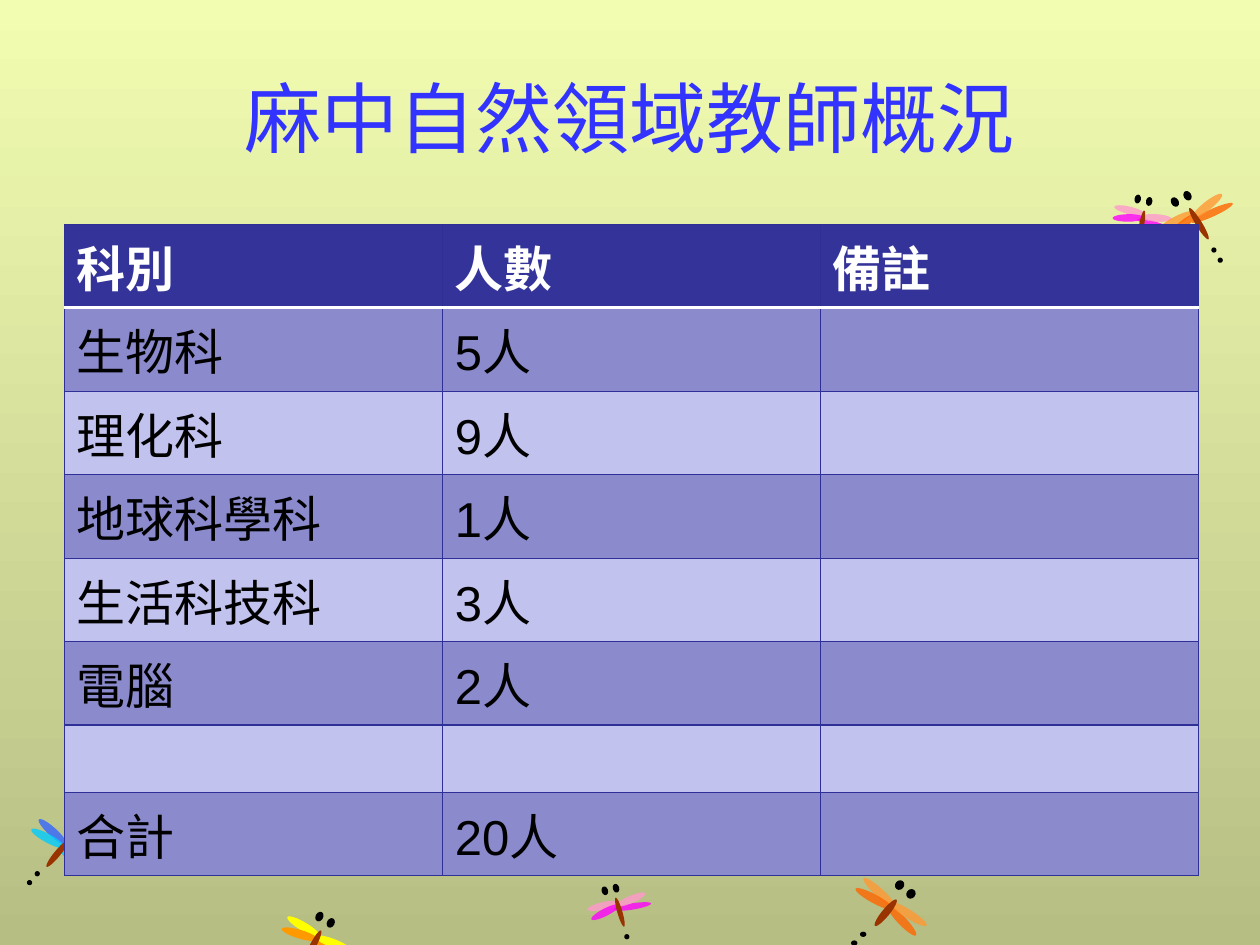
from dataclasses import dataclass

from lxml.etree import SubElement
from pptx import Presentation
from pptx.dml.color import RGBColor
from pptx.enum.shapes import MSO_SHAPE as Preset
from pptx.enum.text import MSO_ANCHOR as Anchor, PP_ALIGN as Align
from pptx.oxml.ns import qn
from pptx.util import Pt

COLORS = {
    "sky": "F2FDB1", "ground": "B7BE84", "title": "3333FF",
    "header": "333399", "dark_row": "8A8ACC", "light_row": "C2C2EE",
    "border": "2F2F98", "white": "FFFFFF", "black": "000000",
    "body": "993300", "magenta": "FF00FF", "pink": "FF99CC",
    "amber": "FF9900", "yellow": "FFFF00", "cyan": "00CCFF",
    "blue": "3366FF", "orange": "FF6600", "peach": "FF9933",
}
FONT = "Arial"
WING_TURNS = (7, 172.9, 183.1, 349)  # relative to the body


@dataclass
class Dragonfly:
    tilt: float
    lower: str
    upper: str
    first_wing: tuple
    wing: tuple
    body: tuple
    eye: tuple
    wings_at: list
    body_at: tuple
    eyes_at: list
    tail_at: list
    dot: tuple = (2.2, 2.2)
    opacity: int = 80


DRAGONFLIES = [
    Dragonfly(10.4, "magenta", "pink", (21.6, 3.6), (18, 4.3), (2.9, 17.3), (2.9, 4.3),
              [(649.4, 126.7), (651.6, 122.4), (636.5, 118.1), (635.8, 122.4)],
              (650.9, 120.2), [(648.7, 111.6), (655.2, 113)], []),
    Dragonfly(343.9, "magenta", "pink", (21.6, 3.6), (18, 4.3), (2.9, 17.3), (2.9, 4.3),
              [(350.6, 516.2), (351.4, 511.9), (335.5, 515.5), (337, 519.1)],
              (352.8, 512.6), [(344.2, 506.9), (350.6, 505.4)], [(357.1, 534.2)]),
    Dragonfly(27.6, "amber", "yellow", (24.5, 4.3), (21.6, 5), (3.6, 19.4), (3.6, 5),
              [(175.7, 540.7), (179.3, 536.4), (162.7, 527), (160.6, 531.4)],
              (177.1, 530.6), [(180.7, 521.3), (187.2, 524.9)], [], opacity=100),
    Dragonfly(39.4, "cyan", "blue", (23.8, 4.3), (21.6, 5), (3.6, 19.4), (3.6, 5),
              [(29.5, 489.6), (33.8, 486), (19.4, 473), (16.6, 476.6)],
              (31, 478.1), [], [(20.2, 498.2), (15.8, 503.3)]),
    Dragonfly(39.4, "orange", "peach", (23.8, 5), (24.5, 5), (4.3, 19.4), (4.3, 5),
              [(503.3, 523.4), (506.9, 519.8), (490.3, 507.6), (487.4, 511.2)],
              (504, 511.9), [(511.9, 503.3), (518.4, 508.3)],
              [(491.8, 532.8), (486.7, 537.8)], dot=(2.9, 2.2)),
    Dragonfly(328.6, "orange", "peach", (25.9, 4.3), (21.6, 5), (3.6, 20.9), (3.6, 5),
              [(679.7, 119.5), (679, 115.2), (661, 123.8), (663.8, 127.4)],
              (683.3, 117.4), [(669.6, 113), (676.8, 109.4)],
              [(692.6, 141.8), (696.2, 147.6)]),
]

STAFF = [
    ("科別", "人數", "備註"),
    ("生物科", "5人", ""),
    ("理化科", "9人", ""),
    ("地球科學科", "1人", ""),
    ("生活科技科", "3人", ""),
    ("電腦", "2人", ""),
    ("", "", ""),
    ("合計", "20人", ""),
]
ROW_HEIGHT, BLANK_HEIGHT, COLUMN_WIDTH = 47.65, 38.4, 216


def rgb(name: str) -> RGBColor:
    return RGBColor.from_string(COLORS[name])


def add_run(paragraph, text: str, size: float, color: str, bold: bool = False) -> None:
    run = paragraph.add_run()
    run.text = text
    run.font.name, run.font.size, run.font.bold = FONT, Pt(size), bold
    run.font.color.rgb = rgb(color)


def add_oval(slide, at: tuple, size: tuple, color: str, turn: float = 0,
             opacity: int = 100, outlined: bool = False) -> None:
    oval = slide.shapes.add_shape(Preset.OVAL, *map(Pt, at + size))
    oval.shadow.inherit = False
    oval.rotation = turn % 360
    oval.fill.solid()
    oval.fill.fore_color.rgb = rgb(color)
    if opacity < 100:
        tint = oval.fill._xPr.find(f".//{qn('a:srgbClr')}")
        SubElement(tint, qn("a:alpha"), val=str(opacity * 1000))
    if outlined:
        oval.line.color.rgb = rgb(color)
        oval.line.width = Pt(0.75)
    else:
        oval.line.fill.background()


def add_dragonfly(slide, fly: Dragonfly) -> None:
    sizes = (fly.first_wing,) + (fly.wing,) * 3
    tints = (fly.lower, fly.upper, fly.upper, fly.lower)
    for at, size, tint, turn in zip(fly.wings_at, sizes, tints, WING_TURNS):
        add_oval(slide, at, size, tint, fly.tilt + turn, fly.opacity)
    add_oval(slide, fly.body_at, fly.body, "body", fly.tilt)
    for at in fly.eyes_at:
        add_oval(slide, at, fly.eye, "black", fly.tilt, outlined=True)
    for at in fly.tail_at:
        add_oval(slide, at, fly.dot, "black", outlined=True)


def set_border(cell, side: str, color: str, width: float) -> None:
    props = cell._tc.get_or_add_tcPr()
    edge = SubElement(props, qn(f"a:{side}"), w=str(Pt(width)))
    paint = SubElement(edge, qn("a:solidFill"))
    SubElement(paint, qn("a:srgbClr"), val=COLORS[color])


def add_staff_table(slide) -> None:
    height = ROW_HEIGHT * (len(STAFF) - 1) + BLANK_HEIGHT
    table = slide.shapes.add_table(len(STAFF), 3, Pt(36.8), Pt(128.2),
                                   Pt(3 * COLUMN_WIDTH), Pt(height)).table
    for column in table.columns:
        column.width = Pt(COLUMN_WIDTH)
    for r, entries in enumerate(STAFF):
        table.rows[r].height = Pt(ROW_HEIGHT if any(entries) else BLANK_HEIGHT)
        row_fill = "header" if r == 0 else "dark_row" if r % 2 else "light_row"
        for c, entry in enumerate(entries):
            cell = table.cell(r, c)
            # Borders come before the fill in the cell properties
            for side in ("lnL", "lnR", "lnT", "lnB"):
                under_header = (r, side) in ((0, "lnB"), (1, "lnT"))
                set_border(cell, side, *(("white", 2) if under_header else ("border", 0.75)))
            cell.fill.solid()
            cell.fill.fore_color.rgb = rgb(row_fill)
            if entry:
                add_run(cell.text_frame.paragraphs[0], entry, 28,
                        "black" if r else "white", bold=r == 0)


def main() -> None:
    deck = Presentation()
    deck.slide_width, deck.slide_height = Pt(720), Pt(540)
    slide = deck.slides.add_slide(deck.slide_layouts[5])

    # Background
    backdrop = slide.background.fill
    backdrop.gradient()
    backdrop.gradient_angle = 270
    for stop, color in zip(backdrop.gradient_stops, ("sky", "ground")):
        stop.color.rgb = rgb(color)

    # Title
    title = slide.shapes.title
    title.left, title.top, title.width, title.height = map(Pt, (36, 21.6, 648, 90))
    title.text_frame.vertical_anchor = Anchor.MIDDLE
    heading = title.text_frame.paragraphs[0]
    heading.alignment = Align.CENTER
    add_run(heading, "麻中自然領域教師概況", 44, "title")

    # Dragonflies, partly behind the table
    for fly in DRAGONFLIES:
        add_dragonfly(slide, fly)

    add_staff_table(slide)
    deck.save("out.pptx")


if __name__ == "__main__":
    main()
